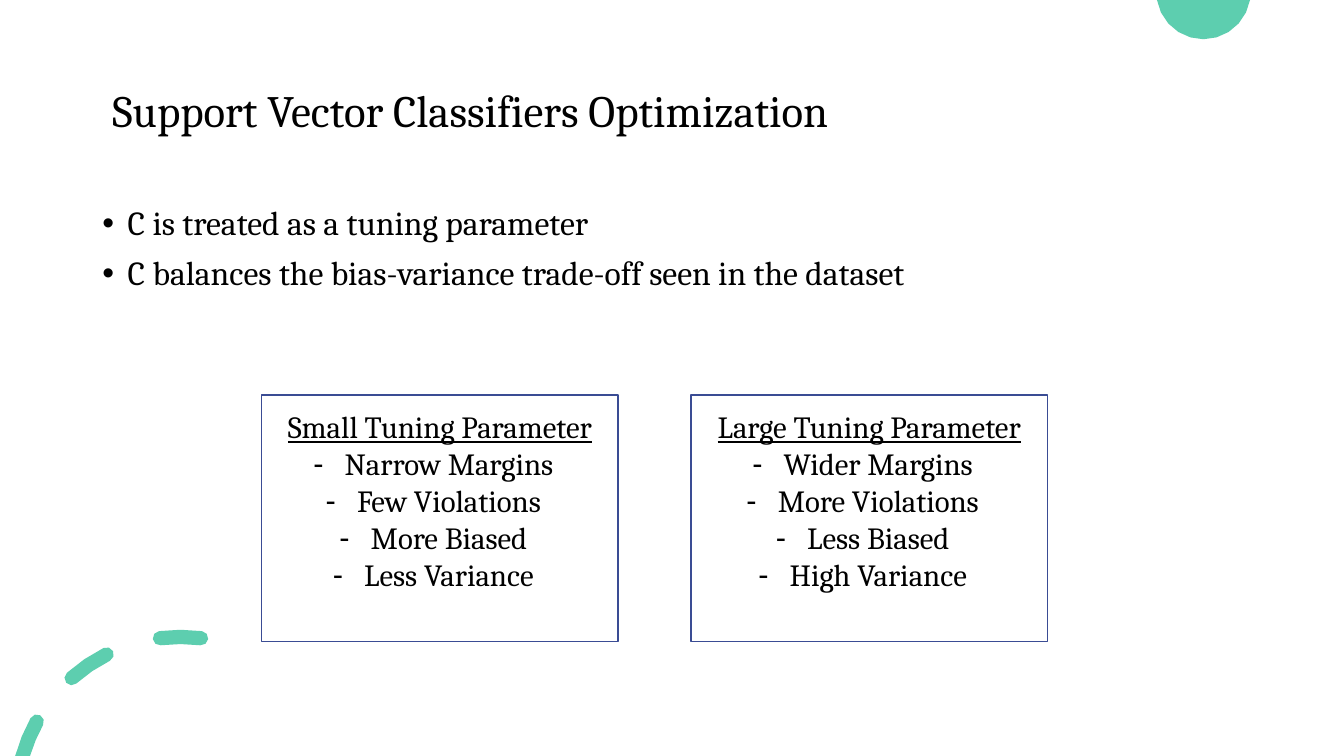
from dataclasses import dataclass
from math import acos, cos, degrees, radians, sin

from lxml import etree
from pptx import Presentation
from pptx.dml.color import RGBColor
from pptx.enum import shapes, text
from pptx.oxml import ns
from pptx.util import Cm, Pt

TITLE = " Support Vector Classifiers Optimization"
POINTS = [
    "C is treated as a tuning parameter",
    "C balances the bias-variance trade-off seen in the dataset",
]
CARDS = [
    ("Small Tuning Parameter",
     [" Narrow Margins", " Few Violations", " More Biased", " Less Variance"]),
    ("Large Tuning Parameter",
     [" Wider Margins", " More Violations", " Less Biased", " High Variance"]),
]
DASH_ANGLES = [(61, 78), (26.7, 41.5), (-7.2, 7.2)]


@dataclass(frozen=True)
class Theme:
    font: str = "Cambria"
    ink: RGBColor = RGBColor(0, 0, 0)
    paper: RGBColor = RGBColor(255, 255, 255)
    mint: RGBColor = RGBColor(0x5D, 0xCE, 0xAF)
    border: RGBColor = RGBColor(0x3A, 0x4C, 0x94)
    title: int = 32
    body: int = 24
    card: int = 22


THEME = Theme()
WIDTH, HEIGHT = 33.87, 19.05
MARGIN, CONTENT_WIDTH = 2.33, 29.21
CARD_LEFT, CARD_TOP, CARD_STEP = 6.59, 9.95, 10.82
CARD_WIDTH, CARD_HEIGHT = 8.99, 6.22
DISC_CENTER, DISC_RADIUS = (30.33, -0.2), 1.19
RING_CENTER, RING_RADIUS, RING_HALF = (4.55, 20.19), 4.14, 0.18


def style(para, size, align=text.PP_ALIGN.LEFT, underline=False):
    para.alignment = align
    for span in para.runs:
        span.font.name = THEME.font
        span.font.size = Pt(size)
        span.font.color.rgb = THEME.ink
        span.font.underline = underline


def add_bullet(para, mark, margin, hang):
    props = para._p.get_or_add_pPr()
    props.set("marL", str(Cm(margin)))
    props.set("indent", str(-Cm(hang)))
    etree.SubElement(props, ns.qn("a:buFont")).set("typeface", "Arial")
    etree.SubElement(props, ns.qn("a:buChar")).set("char", mark)


def arc(center, radius, start, end, steps):
    x, y = center
    angles = [radians(start + (end - start) * i / steps) for i in range(steps + 1)]
    return [(x - radius * sin(a), y - radius * cos(a)) for a in angles]


def edge_angle(center, radius, edge):
    return degrees(acos((center[1] - edge) / radius))


def cap(angle):
    center = arc(RING_CENTER, RING_RADIUS, angle, angle, 1)[0]
    return center


def dash(start, end):
    outer, inner = RING_RADIUS + RING_HALF, RING_RADIUS - RING_HALF
    outer_end, inner_end = (
        min(end, edge_angle(RING_CENTER, radius, HEIGHT)) for radius in (outer, inner))
    tail = arc(cap(end), RING_HALF, end, end + 180, 4)[1:-1] if outer_end == end else []
    head = arc(cap(start), RING_HALF, start + 180, start + 360, 4)[1:-1]
    return (arc(RING_CENTER, outer, start, outer_end, 2) + tail
            + arc(RING_CENTER, inner, inner_end, start, 2) + head)


def disc():
    start = edge_angle(DISC_CENTER, DISC_RADIUS, 0)
    return arc(DISC_CENTER, DISC_RADIUS, start, 360 - start, 10)


def add_outline(page, contours):
    builder = None
    for contour in contours:
        points = [(Cm(x), Cm(y)) for x, y in contour]
        if builder is None:
            builder = page.shapes.build_freeform(*points[0])
        else:
            builder.move_to(*points[0])
        builder.add_line_segments(points[1:], close=True)
    shape = builder.convert_to_shape()
    shape.shadow.inherit = False
    shape.fill.solid()
    shape.fill.fore_color.rgb = THEME.mint
    shape.line.fill.background()


def add_title(page):
    title = page.shapes.title
    title.left, title.top = Cm(MARGIN), Cm(1)
    title.width, title.height = Cm(CONTENT_WIDTH), Cm(3.68)
    frame = title.text_frame
    frame.text = TITLE
    frame.auto_size = text.MSO_AUTO_SIZE.NONE
    frame.vertical_anchor = text.MSO_ANCHOR.MIDDLE
    frame.paragraphs[0].line_spacing = 0.9
    style(frame.paragraphs[0], THEME.title)


def add_points(page):
    box = page.shapes.add_textbox(Cm(MARGIN), Cm(5.08), Cm(CONTENT_WIDTH), Cm(10.72))
    frame = box.text_frame
    frame.word_wrap = True
    frame.text = "\n".join(POINTS)
    for para in frame.paragraphs:
        para.line_spacing = 0.9
        para.space_before = Pt(10)
        style(para, THEME.body)
        add_bullet(para, "•", 0.64, 0.64)


def add_card(page, column, heading, traits):
    box = page.shapes.add_shape(
        shapes.MSO_SHAPE.RECTANGLE, Cm(CARD_LEFT + column * CARD_STEP),
        Cm(CARD_TOP), Cm(CARD_WIDTH), Cm(CARD_HEIGHT))
    box.shadow.inherit = False
    box.fill.solid()
    box.fill.fore_color.rgb = THEME.paper
    box.line.color.rgb = THEME.border
    box.line.width = Pt(1)
    frame = box.text_frame
    frame.word_wrap = True
    frame.vertical_anchor = text.MSO_ANCHOR.MIDDLE
    frame.margin_bottom = Cm(1.02)
    frame.text = "\n".join([heading, *traits])
    for row, para in enumerate(frame.paragraphs):
        style(para, THEME.card, text.PP_ALIGN.CENTER, underline=row == 0)
        if row:
            add_bullet(para, "-", 0.29, 0.62)


def main():
    deck = Presentation()
    deck.slide_width, deck.slide_height = Cm(WIDTH), Cm(HEIGHT)
    page = deck.slides.add_slide(deck.slide_layouts[5])
    add_outline(page, [disc()])
    add_outline(page, [dash(*angles) for angles in DASH_ANGLES])
    add_title(page)
    add_points(page)
    for column, (heading, traits) in enumerate(CARDS):
        add_card(page, column, heading, traits)
    deck.save("out.pptx")


if __name__ == "__main__":
    main()
